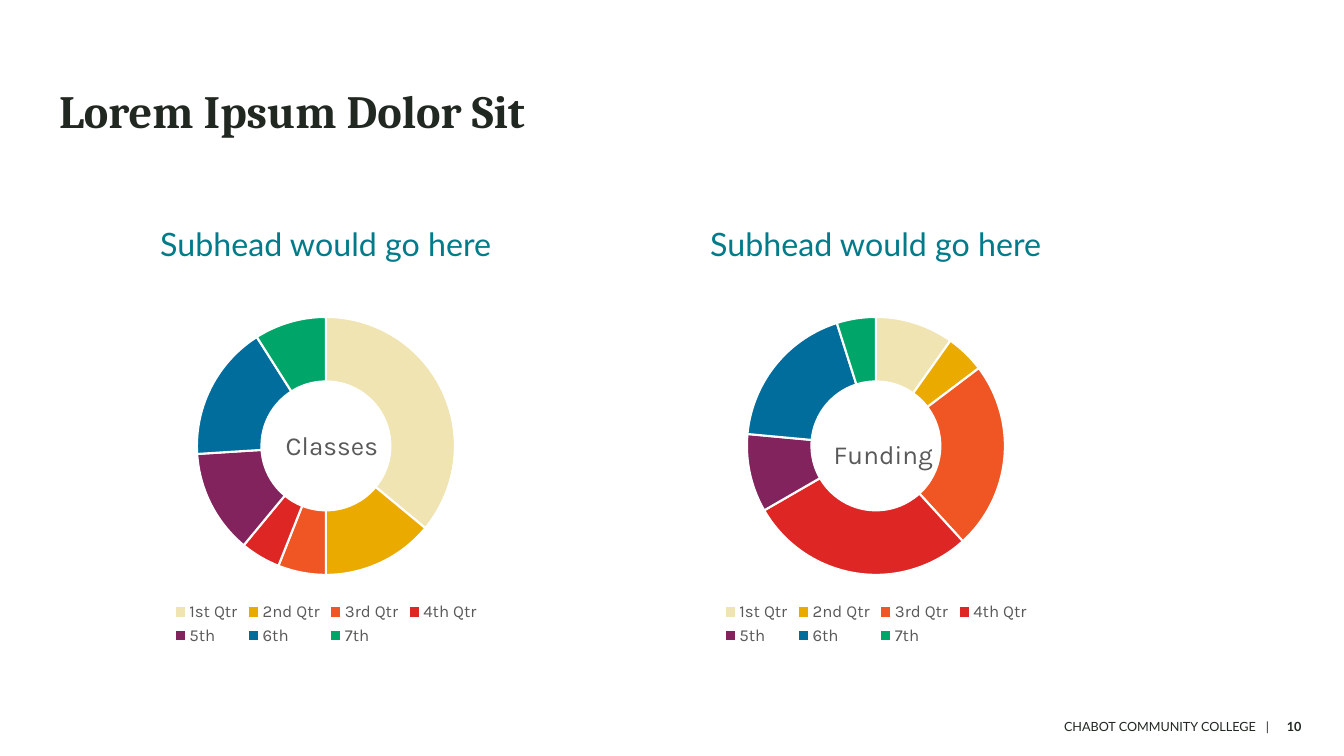
from lxml import etree
from pptx import Presentation
from pptx.chart.data import CategoryChartData
from pptx.dml.color import RGBColor
from pptx.enum.chart import XL_CHART_TYPE, XL_LEGEND_POSITION
from pptx.enum.text import MSO_ANCHOR, PP_ALIGN
from pptx.oxml.ns import qn
from pptx.util import Pt

DOUGHNUT = XL_CHART_TYPE.DOUGHNUT
BOTTOM_LEGEND = XL_LEGEND_POSITION.BOTTOM
MIDDLE, BOTTOM = MSO_ANCHOR.MIDDLE, MSO_ANCHOR.BOTTOM
LEFT, CENTER, RIGHT = PP_ALIGN.LEFT, PP_ALIGN.CENTER, PP_ALIGN.RIGHT

EMU_PER_PX = 914400 / 100.8
COLORS = {"ink": "212721", "teal": "007B89", "grey": "595959", "white": "FFFFFF"}
SLICE_COLORS = ["F0E4B2", "EBAA00", "F05623", "DE2725", "82235E", "006D9D", "00A669"]
QUARTERS = ["1st Qtr", "2nd Qtr", "3rd Qtr", "4th Qtr", "5th", "6th", "7th"]
COLUMN_W = 534
CHART_TOP, CHART_H = 244, 406
# Column left, label in the hole, label offset within the chart, values
COLUMNS = [
    (59, "Classes", (222, 180), [36, 14, 6, 5, 13, 17, 9]),
    (609, "Funding", (220, 189), [10, 5, 24, 29, 10, 19, 5]),
]


def px(length):
    return round(length * EMU_PER_PX)


def style_font(font, name, size, color, bold=False):
    font.name = name
    font.size = Pt(size)
    font.bold = bold
    font.color.rgb = RGBColor.from_string(COLORS[color])


def place(shape, left, top, width, height):
    shape.left, shape.top = px(left), px(top)
    shape.width, shape.height = px(width), px(height)


def set_frame(frame, anchor, align, inset):
    """Lay out a text frame and return its first paragraph."""
    frame.word_wrap = True
    frame.vertical_anchor = anchor
    if inset is not None:
        frame.margin_left = frame.margin_right = px(inset)
        frame.margin_top = frame.margin_bottom = px(inset)
    paragraph = frame.paragraphs[0]
    paragraph.alignment = align
    return paragraph


def add_run(paragraph, text, name, size, color, bold=False):
    run = paragraph.add_run()
    run.text = text
    style_font(run.font, name, size, color, bold)
    return run


def add_text_box(slide, box, anchor, align, inset=None):
    text_box = slide.shapes.add_textbox(*map(px, box))
    return set_frame(text_box.text_frame, anchor, align, inset)


def add_title(slide, text):
    title = slide.shapes.title
    place(title, 59, 41, 1193, 146)
    paragraph = set_frame(title.text_frame, MIDDLE, LEFT, 0)
    paragraph.line_spacing = 0.9
    add_run(paragraph, text, "Cambria", 33, "ink", bold=True)


def add_subhead(slide, left, text):
    paragraph = add_text_box(slide, (left, 192, COLUMN_W, 71), BOTTOM, CENTER, 0)
    paragraph.line_spacing = 0.9
    add_run(paragraph, text, "Lato", 23, "teal")


def set_layout(element, position, size=None, inner=False):
    """Pin a chart part at a px position within its chart."""
    layout = element.find(qn("c:layout"))
    if layout is None:
        layout = etree.Element(qn("c:layout"))
        text = element.find(qn("c:tx"))
        if text is None:
            element.insert(0, layout)
        else:
            text.addnext(layout)
    for child in list(layout):
        layout.remove(child)
    settings = [("layoutTarget", "inner")] if inner else []
    settings += [("xMode", "edge"), ("yMode", "edge")]
    settings += zip("xy", (position[0] / COLUMN_W, position[1] / CHART_H))
    if size:
        settings += zip("wh", (size[0] / COLUMN_W, size[1] / CHART_H))
    manual = etree.SubElement(layout, qn("c:manualLayout"))
    for tag, value in settings:
        etree.SubElement(manual, qn(f"c:{tag}")).set("val", str(value))


def add_doughnut(slide, left, label, label_at, values):
    data = CategoryChartData()
    data.categories = QUARTERS
    data.add_series("Series 1", values)
    frame = slide.shapes.add_chart(
        DOUGHNUT, px(left), px(CHART_TOP), px(COLUMN_W), px(CHART_H), data)
    chart = frame.chart
    style_font(chart.font, "Karla", 10, "ink")

    chart.has_title = True
    title = chart.chart_title
    title.include_in_layout = False
    add_run(title.text_frame.paragraphs[0], label, "Karla", 18.6, "grey")
    title_xml = chart._chartSpace.chart.find(qn("c:title"))
    set_layout(title_xml, label_at)

    chart.has_legend = True
    chart.legend.position = BOTTOM_LEGEND
    chart.legend.include_in_layout = False
    style_font(chart.legend.font, "Karla", 12, "grey")

    plot = chart.plots[0]
    plot.vary_by_categories = True
    plot._element.find(qn("c:holeSize")).set("val", "75")
    set_layout(chart._chartSpace.chart.plotArea, (138, 73), (258, 258), inner=True)
    for index, color in enumerate(SLICE_COLORS):
        part = plot.series[0].points[index].format
        part.fill.solid()
        part.fill.fore_color.rgb = RGBColor.from_string(color)
        part.line.color.rgb = RGBColor.from_string(COLORS["white"])
        part.line.width = Pt(1.5)


def add_footer(slide, owner, number):
    paragraph = add_text_box(slide, (825, 707, 454, 40), MIDDLE, RIGHT)
    add_run(paragraph, owner, "Lato", 9, "ink")
    gap = add_run(paragraph, " ", "Lato", 9, "ink")
    gap.font._element.set("spc", "500")
    add_run(paragraph, "|", "Lato", 9, "ink")
    paragraph = add_text_box(slide, (1277, 707, 51, 40), MIDDLE, LEFT)
    add_run(paragraph, number, "Lato", 9, "ink", bold=True)


def main():
    deck = Presentation()
    deck.slide_width, deck.slide_height = px(1344), px(756)
    slide = deck.slides.add_slide(deck.slide_layouts[5])
    add_title(slide, "Lorem Ipsum Dolor Sit")
    for left, label, label_at, values in COLUMNS:
        add_subhead(slide, left, "Subhead would go here")
        add_doughnut(slide, left, label, label_at, values)
    add_footer(slide, "CHABOT COMMUNITY COLLEGE", "10")
    deck.save("out.pptx")


if __name__ == "__main__":
    main()
